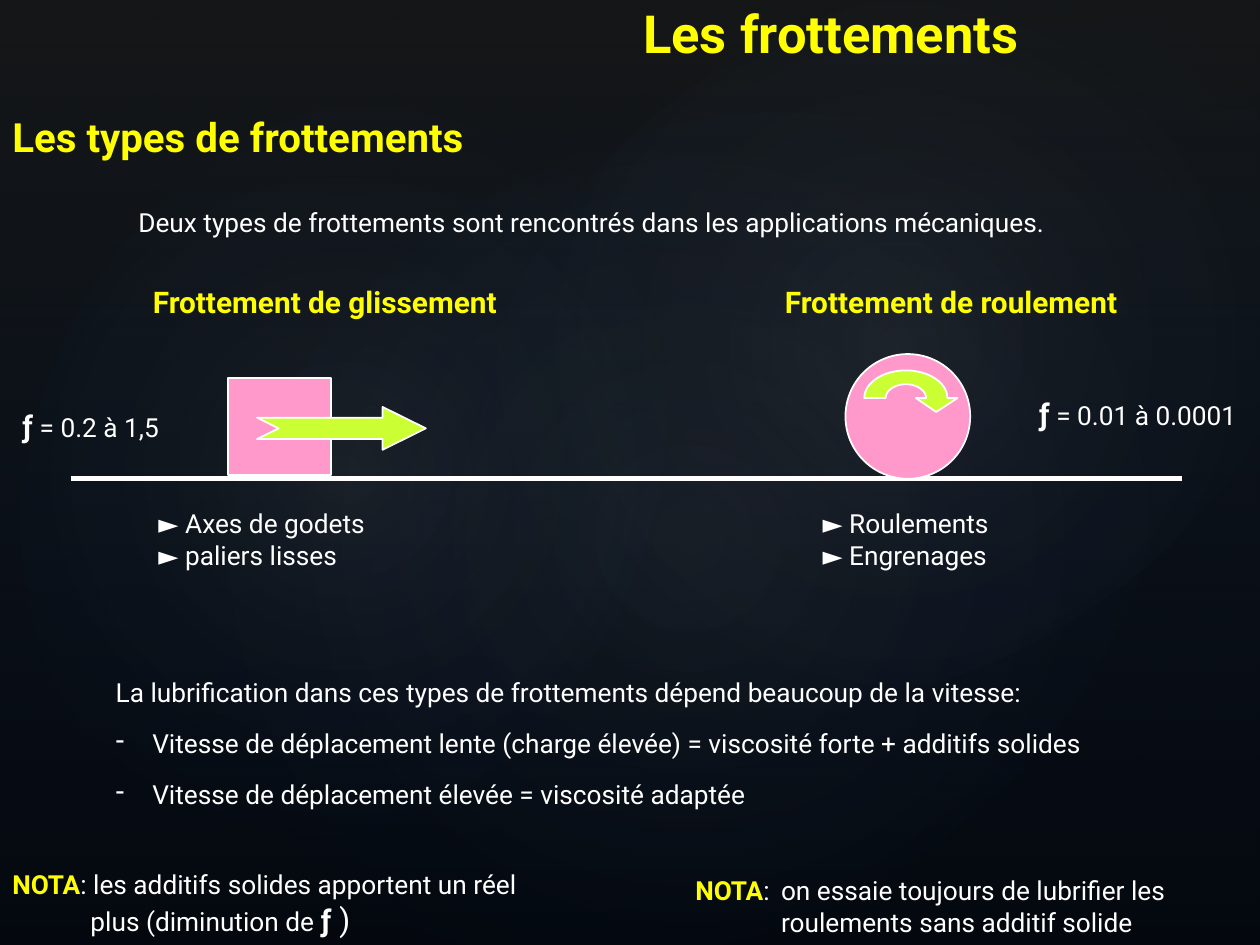
"""Build the slide on sliding and rolling friction."""
from math import cos, pi, sin

from pptx import Presentation
from pptx.dml.color import RGBColor
from pptx.enum.shapes import MSO_CONNECTOR, MSO_SHAPE as Preset
from pptx.enum.text import MSO_ANCHOR as Anchor, PP_ALIGN as Align
from pptx.oxml import parse_xml
from pptx.oxml.ns import nsdecls, qn
from pptx.util import Inches, Pt

COLORS = {
    "night": "000000", "grey": "3B4042", "blue": "2F5897", "mist": "ACB3B6",
    "yellow": "FFFF00", "white": "FFFFFF", "pink": "FF99CC", "lime": "CCFF33",
}
RGB = {name: RGBColor.from_string(value) for name, value in COLORS.items()}


def text_area(left, top, width, height, anchor=Anchor.TOP):
    """Add an empty wrapping text box and return its frame."""
    frame = slide.shapes.add_textbox(*map(Inches, (left, top, width, height))).text_frame
    frame.word_wrap = True
    frame.vertical_anchor = anchor
    return frame


def write(frame, *runs, size=15, color="white", bold=False, align=Align.LEFT,
          margin=0, indent=0, before=0, bullet=None):
    """Append a paragraph; a run is a string or a (string, overrides) pair."""
    paragraph = frame.add_paragraph() if frame.text else frame.paragraphs[0]
    paragraph.alignment = align
    paragraph.space_before = Pt(before)
    properties = paragraph._p.get_or_add_pPr()
    properties.set("marL", str(Inches(margin)))
    properties.set("indent", str(Inches(indent)))
    if bullet:
        properties.append(parse_xml(f'<a:buChar {nsdecls("a")} char="{bullet}"/>'))
    for item in runs:
        words, changes = (item, {}) if isinstance(item, str) else item
        look = {"size": size, "color": color, "bold": bold, **changes}
        run = paragraph.add_run()
        run.text = words
        run.font.name = "Roboto"
        run.font.size = Pt(look["size"])
        run.font.bold = look["bold"]
        run.font.color.rgb = RGB[look["color"]]


deck = Presentation()
deck.slide_width, deck.slide_height = Inches(10), Inches(7.5)
slide = deck.slides.add_slide(deck.slide_layouts[6])
slide.background.fill.solid()
slide.background.fill.fore_color.rgb = RGB["night"]

linear = '<a:lin ang="5400000" scaled="0"/>'
radial = '<a:path path="circle"><a:fillToRect l="50000" t="50000" r="50000" b="50000"/></a:path>'
for preset, box, rotation, stops, direction in [
    (Preset.RECTANGLE, (0, 0, 10, 7.5), 0, [(0, "grey", 36), (100, "blue", 10)], linear),
    (Preset.OVAL, (1.5, 1.14, 7.92, 6.24), 328.7, [(0, "mist", 7), (58, "blue", 0)], radial),
    (Preset.OVAL, (-0.3, 1.28, 6.06, 4.9), 294.3, [(0, "mist", 8), (58, "blue", 0)], radial),
    (Preset.OVAL, (3.58, 0.13, 7.09, 5.2), 328.7, [(0, "mist", 8), (58, "blue", 0)], radial),
]:
    glow = slide.shapes.add_shape(preset, *map(Inches, box))
    glow.rotation = rotation
    glow.shadow.inherit = False
    glow.line.fill.background()
    glow.fill.background()
    stop_xml = "".join(
        f'<a:gs pos="{place * 1000}"><a:srgbClr val="{COLORS[name]}">'
        f'<a:alpha val="{opacity * 1000}"/></a:srgbClr></a:gs>'
        for place, name, opacity in stops)
    gradient = parse_xml(f'<a:gradFill {nsdecls("a")} rotWithShape="1">'
                         f'<a:gsLst>{stop_xml}</a:gsLst>{direction}</a:gradFill>')
    outline = glow._element.spPr
    outline.replace(outline.find(qn("a:noFill")), gradient)

ground = slide.shapes.add_connector(
    MSO_CONNECTOR.STRAIGHT, *map(Inches, (0.56, 3.8, 9.38, 3.8)))
ground.line.color.rgb = RGB["white"]
ground.line.width = Pt(3)
ground._element.spPr.append(parse_xml(f'<a:effectLst {nsdecls("a")}/>'))

wheel = slide.shapes.add_shape(Preset.OVAL, *map(Inches, (6.71, 2.81, 0.99, 0.99)))
block = slide.shapes.add_shape(Preset.RECTANGLE, *map(Inches, (1.81, 3, 0.82, 0.77)))
push = slide.shapes.add_shape(
    Preset.NOTCHED_RIGHT_ARROW, *map(Inches, (2.04, 3.23, 1.34, 0.34)))
push.adjustments[0], push.adjustments[1] = 0.5, 1.01

steps = 32
angles = [pi * step / steps for step in range(steps + 1)]
inner = [(7.19 + 0.16 * cos(a), 3.16 - 0.11 * sin(a)) for a in angles]
outer = [(7.19 - 0.33 * cos(a), 3.16 - 0.22 * sin(a)) for a in angles]
head = [(7.6, 3.16), (7.43, 3.27), (7.27, 3.16)]
start, *rest = [(Inches(x), Inches(y)) for x, y in inner + outer + head]
builder = slide.shapes.build_freeform(*start)
builder.add_line_segments(rest, close=True)
spin = builder.convert_to_shape()

for part, color in [(wheel, "pink"), (block, "pink"), (push, "lime"), (spin, "lime")]:
    part.shadow.inherit = False
    part.fill.solid()
    part.fill.fore_color.rgb = RGB[color]
    part.line.color.rgb = RGB["white"]
    part.line.width = Pt(1)

heading = {"color": "yellow", "bold": True}
symbol = ("ƒ", {"size": 17, "bold": True})
nota = ("NOTA", heading)

write(text_area(3.19, 0, 6.81, 0.52, Anchor.MIDDLE), "Les frottements",
      size=30, align=Align.CENTER, **heading)
write(text_area(0, 0.84, 10, 0.49), "Les types de frottements", size=23, **heading)
write(text_area(0, 1.59, 10, 0.36),
      "Deux types de frottements sont rencontrés dans les applications mécaniques.", margin=1)

for left, kind in [(0, "glissement"), (4.97, "roulement")]:
    write(text_area(left, 2.2, 5.16, 0.39), f"Frottement de {kind}",
          size=17, align=Align.CENTER, **heading)

for box, value in [((0, 3.19, 1.44, 0.64), " = 0.2 à 1,5"),
                   ((8.06, 3.09, 1.94, 0.39), " = 0.01 à 0.0001")]:
    write(text_area(*box), symbol, value, align=Align.CENTER)

for left, examples in [(1.16, ["Axes de godets", "paliers lisses"]),
                       (6.43, ["Roulements", "Engrenages"])]:
    uses = text_area(left, 3.98, 2.2, 0.61)
    for example in examples:
        write(uses, f"► {example}")

lubrication = text_area(0.82, 5.32, 8.15, 1.18)
write(lubrication,
      "La lubrification dans ces types de frottements dépend beaucoup de la vitesse:")
for speed in ["Vitesse de déplacement lente (charge élevée) = viscosité forte + additifs solides",
              "Vitesse de déplacement élevée = viscosité adaptée"]:
    write(lubrication, speed, margin=0.29, indent=-0.29, before=11, bullet="-")

rolling_note = text_area(5.42, 6.89, 4.58, 0.61)
write(rolling_note, nota, ":\ton essaie toujours de lubrifier les", margin=0.68, indent=-0.68)
write(rolling_note, "roulements sans additif solide", margin=0.68)

sliding_note = text_area(0, 6.84, 4.26, 0.66)
write(sliding_note, nota, ": les additifs solides apportent un réel")
write(sliding_note, "plus (diminution de ", symbol, (" )", {"size": 18}), margin=0.62)

deck.save("out.pptx")
